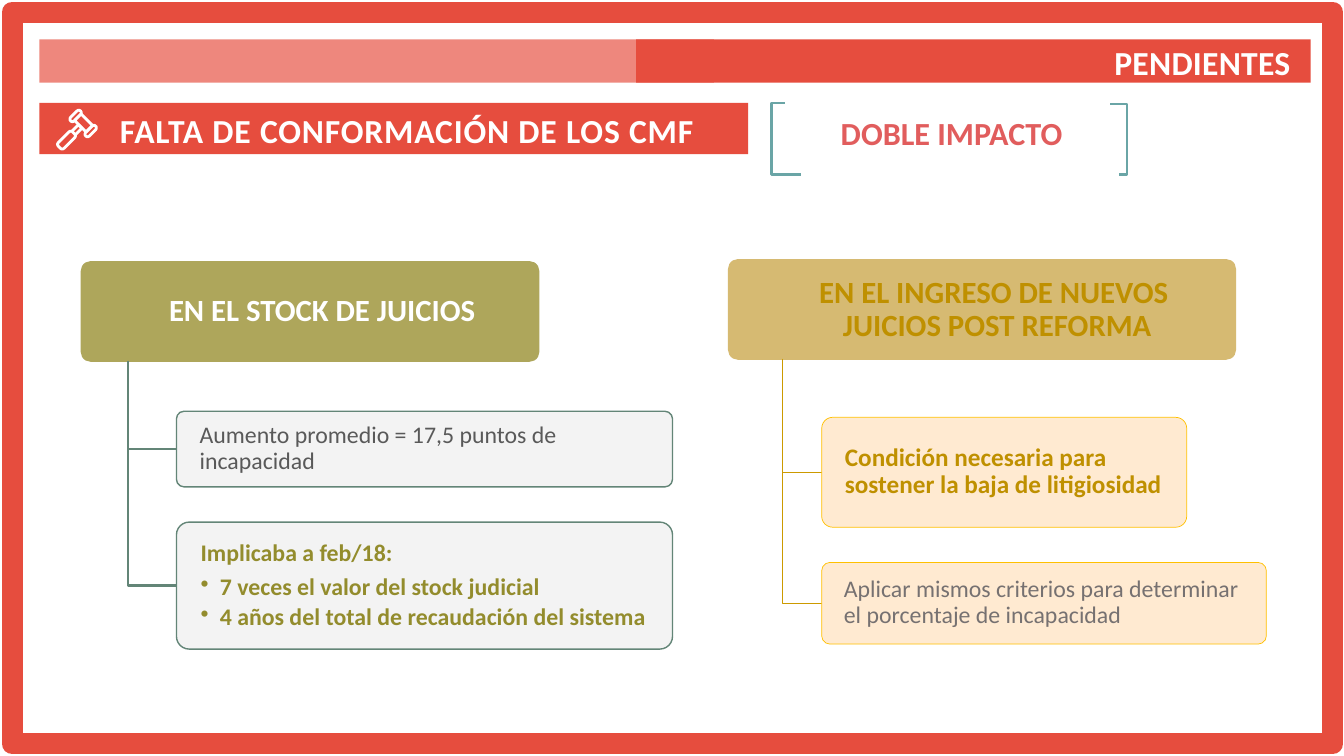
"""Build the slide on the double impact of the pending CMF formation."""
from dataclasses import dataclass

from lxml import etree
from pptx import Presentation
from pptx.dml import color
from pptx.enum import shapes as es, text as et
from pptx.oxml import ns
from pptx.util import Inches, Pt

RED, OLIVE, GOLD, GREEN, TEAL, WHITE = "E64D3E", "938C2D", "BF9000", "638577", "6AA5A6", "FFFFFF"
RECT, ROUND = es.MSO_SHAPE.RECTANGLE, es.MSO_SHAPE.ROUNDED_RECTANGLE
LEFT, CENTER, RIGHT = et.PP_ALIGN.LEFT, et.PP_ALIGN.CENTER, et.PP_ALIGN.RIGHT
Box = tuple[float, float, float, float]


@dataclass
class Item:
    box: Box
    text_box: Box
    lines: list[str]
    size: float
    color: str
    bold: bool = True


@dataclass
class Branch:
    head: Item
    head_fill: str
    trunk: tuple[float, float]
    trunk_line: tuple[str, float]
    item_fill: str
    item_line: tuple[str, float]
    items: list[Item]


@dataclass
class GavelPart:
    center: tuple[float, float]
    size: tuple[float, float]
    angle: float
    round: float


BRANCHES = [
    Branch(Item((7.22, 2.57, 5.04, 1), (7.25, 2.61, 5.28, 0.93),
                ["EN EL INGRESO DE NUEVOS \vJUICIOS POST REFORMA"], 22, GOLD),
           "D6BA72", (7.76, 3.56), ("CC9A00", 1), "FFE8CC", ("FFC000", 0.5),
           [Item((8.15, 4.14, 3.62, 1.09), (8.18, 4.17, 3.55, 1.02),
                 ["Condición necesaria para sostener la baja de litigiosidad"], 18, GOLD),
            Item((8.15, 5.58, 4.41, 0.81), (8.17, 5.6, 4.36, 0.76),
                 ["Aplicar mismos criterios para determinar \vel porcentaje de incapacidad"],
                 17, "767171", False)]),
    Branch(Item((0.8, 2.59, 4.55, 1), (0.82, 2.63, 4.75, 0.93),
                ["EN EL STOCK DE JUICIOS"], 22, WHITE),
           "AEA65B", (1.27, 3.58), (GREEN, 2), "F2F2F2", (GREEN, 1),
           [Item((1.75, 4.08, 4.92, 0.75), (1.78, 4.1, 4.88, 0.7),
                 ["Aumento promedio = 17,5 puntos de incapacidad"], 17, "595959", False),
            Item((1.75, 5.18, 4.92, 1.26), (1.79, 5.22, 4.85, 1.19),
                 ["Implicaba a feb/18:", "7 veces el valor del stock judicial",
                  "4 años del total de recaudación del sistema"], 17, OLIVE)]),
]
BRACKETS = [
    [(7.94, 1.73), (7.65, 1.73), (7.65, 1.02), (7.79, 1.02)],
    [(11.01, 1.03), (11.18, 1.03), (11.18, 1.73), (11.1, 1.73)],
]
GAVEL = [
    GavelPart((0.75, 1.15), (0.14, 0.05), -45, 0.5),
    GavelPart((0.9, 1.3), (0.14, 0.05), -45, 0.5),
    GavelPart((0.83, 1.22), (0.16, 0.09), 45, 0),
    GavelPart((0.76, 1.29), (0.1, 0.05), -45, 0),
    GavelPart((0.66, 1.39), (0.2, 0.08), -45, 0.3),
]


def rgb(value: str) -> color.RGBColor:
    """Turn a hex string into a colour."""
    return color.RGBColor.from_string(value)


def style(s, fill: str | None = None, line: tuple[str, float] | None = None, alpha: int = 100) -> None:
    """Set fill, line and opacity, and drop the shadow."""
    s.shadow.inherit = False
    if fill:
        s.fill.solid()
        s.fill.fore_color.rgb = rgb(fill)
        if alpha < 100:
            clr = s.fill._xPr.find(".//" + ns.qn("a:srgbClr"))
            etree.SubElement(clr, ns.qn("a:alpha")).set("val", str(alpha * 1000))
    else:
        s.fill.background()
    if line:
        s.line.color.rgb, s.line.width = rgb(line[0]), Pt(line[1])
    else:
        s.line.fill.background()


def add_box(sl, box: Box, kind=RECT, adj: float = 0.1, **look):
    """Add a styled preset shape."""
    s = sl.shapes.add_shape(kind, *map(Inches, box))
    if kind == ROUND:
        s.adjustments[0] = adj
    style(s, **look)
    return s


def add_polyline(sl, points: list[tuple[float, float]], line: tuple[str, float]) -> None:
    """Draw an open line through the points."""
    start, *rest = [(Inches(x), Inches(y)) for x, y in points]
    fb = sl.shapes.build_freeform(*start)
    fb.add_line_segments(rest, close=False)
    style(fb.convert_to_shape(), line=line)


def add_bullet(p) -> None:
    """Give a paragraph a hanging bullet."""
    pPr = p._p.get_or_add_pPr()
    pPr.set("marL", str(Inches(0.19)))
    pPr.set("indent", str(-Inches(0.19)))
    etree.SubElement(pPr, ns.qn("a:buChar")).set("char", "•")


def write(s, lines: list[str], *, size: float, color: str, bold: bool = True, align=LEFT,
          inset: Box = (0, 0, 0, 0), spacing: float = 1, track: float = 0, wrap: bool = True) -> None:
    """Write the lines into a shape, bulleting all after the first."""
    tf = s.text_frame
    tf.word_wrap, tf.vertical_anchor = wrap, et.MSO_ANCHOR.MIDDLE
    tf.margin_left, tf.margin_top, tf.margin_right, tf.margin_bottom = map(Inches, inset)
    tf.text = "\n".join(lines)
    for i, p in enumerate(tf.paragraphs):
        p.alignment, p.line_spacing = align, spacing
        if i < len(lines) - 1:
            p.space_after = Pt(3 if i else 6)
        if i:
            add_bullet(p)
        for r in p.runs:
            f = r.font
            f.name, f.size, f.bold, f.color.rgb = "Calibri", Pt(size), bold, rgb(color)
            if track:
                r._r.get_or_add_rPr().set("spc", str(round(track * 100)))


def add_label(sl, box: Box, lines: list[str], **fmt) -> None:
    """Add a text box."""
    write(sl.shapes.add_textbox(*map(Inches, box)), lines, **fmt)


def add_item(sl, item: Item, fill: str, line: tuple[str, float] | None = None, alpha: int = 100, **fmt) -> None:
    """Add a rounded box and its text."""
    add_box(sl, item.box, ROUND, fill=fill, line=line, alpha=alpha)
    add_label(sl, item.text_box, item.lines, size=item.size, color=item.color,
              bold=item.bold, spacing=0.9, **fmt)


def add_branch(sl, b: Branch) -> None:
    """Add a heading with the boxes that hang from it."""
    add_item(sl, b.head, b.head_fill, align=CENTER, inset=(0.05, 0.03, 0.05, 0.03))
    x, y = b.trunk
    for item in b.items:
        left, top, _, height = item.box
        mid = top + height / 2
        add_polyline(sl, [(x, y), (x, mid), (left, mid)], b.trunk_line)
        add_item(sl, item, b.item_fill, b.item_line, 90, inset=(0.2, 0, 0, 0))


def add_gavel(sl) -> None:
    """Draw the gavel icon from rotated boxes."""
    for part in GAVEL:
        (x, y), (w, h) = part.center, part.size
        s = add_box(sl, (x - w / 2, y - h / 2, w, h), ROUND, part.round, fill=RED, line=(WHITE, 2))
        s.rotation = part.angle


def main() -> None:
    """Build and save the slide."""
    prs = Presentation()
    prs.slide_width, prs.slide_height = Inches(13.33), Inches(7.5)
    sl = prs.slides.add_slide(prs.slide_layouts[6])
    add_box(sl, (0.39, 0.39, 6.69, 0.43), fill=RED, alpha=67)
    banner = add_box(sl, (6.31, 0.39, 6.69, 0.43), fill=RED)
    write(banner, ["PENDIENTES"], size=24, color=WHITE, align=RIGHT, inset=(0, 0.03, 0.2, 0), track=0.2)
    title = add_box(sl, (0.39, 1.02, 7.03, 0.51), fill=RED)
    write(title, ["FALTA DE CONFORMACIÓN DE LOS CMF"], size=24, color=WHITE,
          inset=(0.8, 0.03, 0, 0), track=0.6, wrap=False)
    add_gavel(sl)
    for b in BRANCHES:
        add_branch(sl, b)
    for points in BRACKETS:
        add_polyline(sl, points, (TEAL, 1.75))
    add_label(sl, (7.69, 1.12, 3.5, 0.39), ["DOBLE IMPACTO"], size=23, color="E15D5D",
              align=CENTER, inset=(0, 0.01, 0, 0))
    add_box(sl, (0.12, 0.12, 13.1, 7.26), line=(RED, 15))
    prs.save("out.pptx")


if __name__ == "__main__":
    main()
